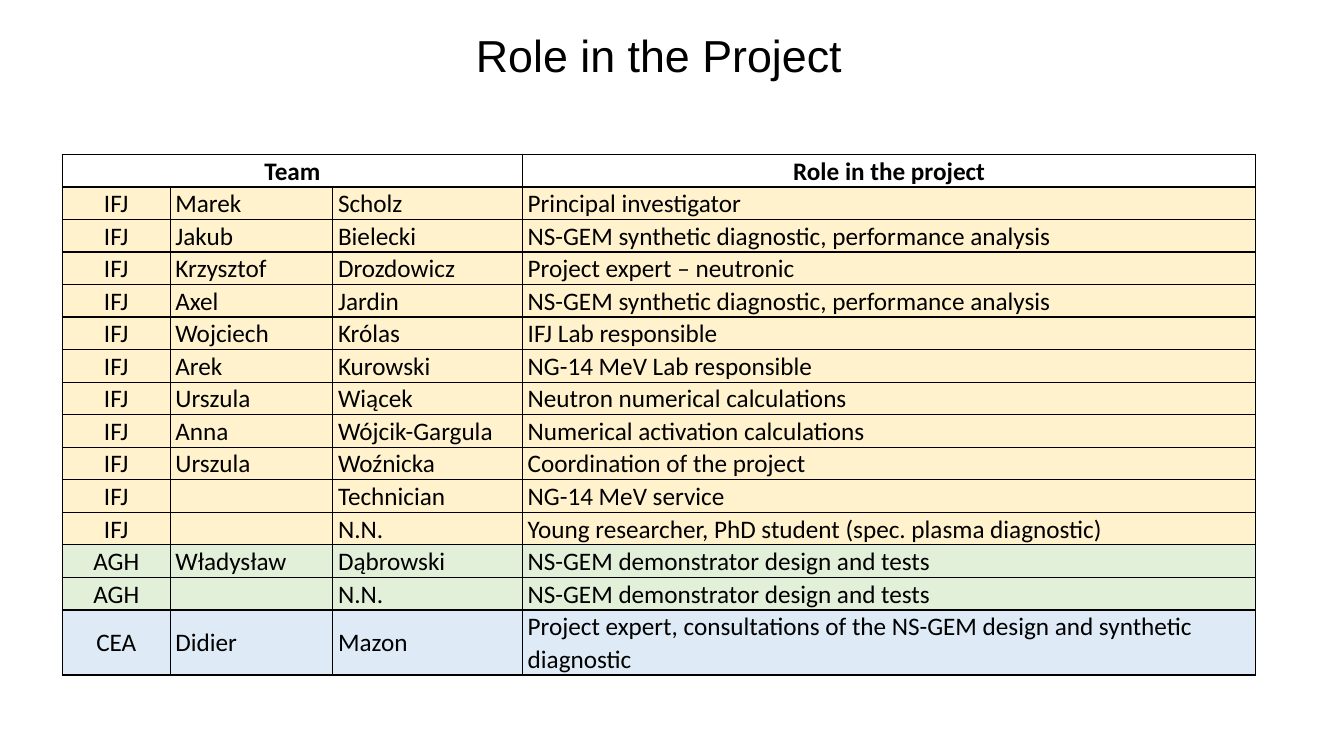
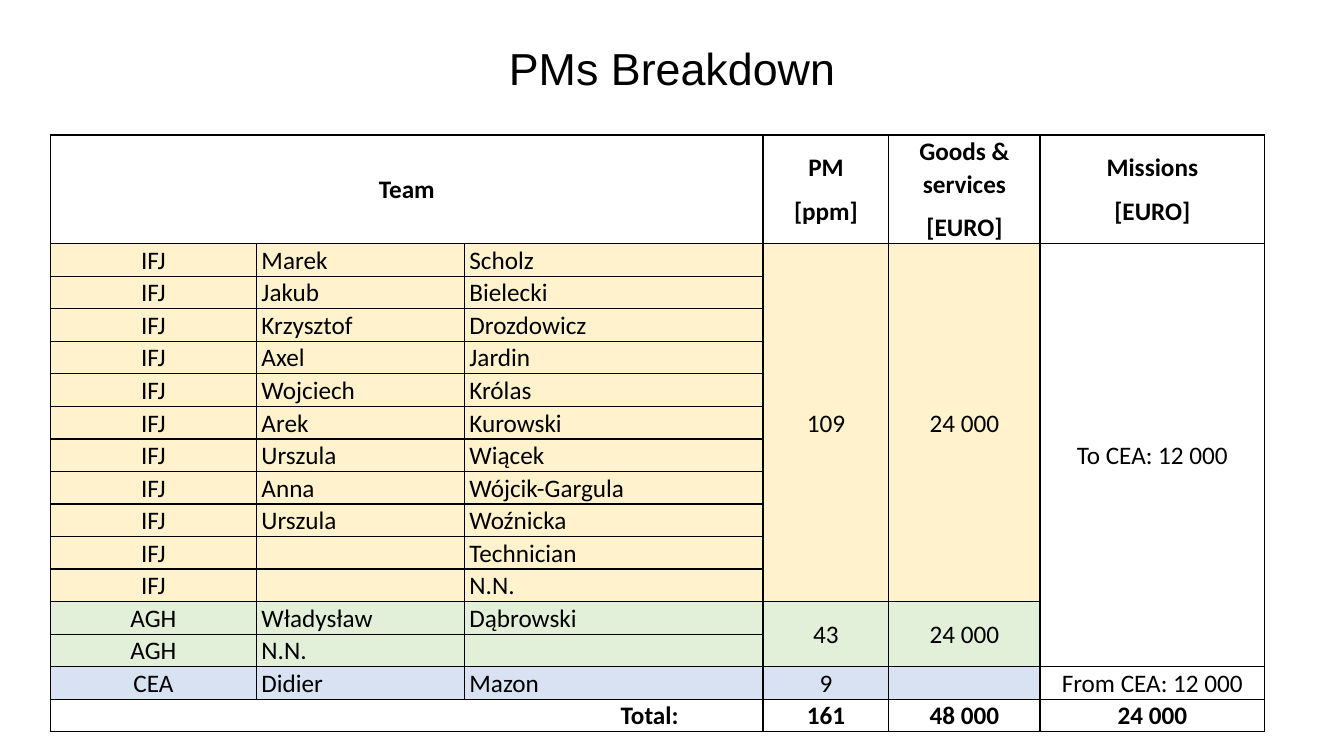
from lxml import etree
from pptx import Presentation
from pptx import util as u
from pptx.dml.color import RGBColor
from pptx.enum import text
from pptx.oxml import ns

BLACK, WHITE, SAND, GREEN = "000000", "FFFFFF", "FFF2CC", "E2EFD9"
CENTER, LEFT, RIGHT = text.PP_ALIGN.CENTER, text.PP_ALIGN.LEFT, text.PP_ALIGN.RIGHT
ROW_HEIGHT = 0.82

TEAM = [
    ("IFJ", "Marek", "Scholz", "Principal investigator"),
    ("IFJ", "Jakub", "Bielecki", "NS-GEM synthetic diagnostic, performance analysis"),
    ("IFJ", "Krzysztof", "Drozdowicz", "Project expert – neutronic"),
    ("IFJ", "Axel", "Jardin", "NS-GEM synthetic diagnostic, performance analysis"),
    ("IFJ", "Wojciech", "Królas", "IFJ Lab responsible"),
    ("IFJ", "Arek", "Kurowski", "NG-14 MeV Lab responsible"),
    ("IFJ", "Urszula", "Wiącek", "Neutron numerical calculations"),
    ("IFJ", "Anna", "Wójcik-Gargula", "Numerical activation calculations"),
    ("IFJ", "Urszula", "Woźnicka", "Coordination of the project"),
    ("IFJ", "", "Technician", "NG-14 MeV service"),
    ("IFJ", "", "N.N.", "Young researcher, PhD student (spec. plasma diagnostic)"),
    ("AGH", "Władysław", "Dąbrowski", "NS-GEM demonstrator design and tests"),
    ("AGH", "", "N.N.", "NS-GEM demonstrator design and tests"),
    ("CEA", "Didier", "Mazon",
     "Project expert, consultations of the NS-GEM design and synthetic diagnostic"),
]


def rgb(value):
    return RGBColor.from_string(value)


def apply(target, values):
    for name, value in values.items():
        setattr(target, name, value)


class Deck:
    TITLE_FONT = {"name": "Arial", "size": u.Pt(32), "bold": False}
    CELL_FONT = {"name": "Calibri", "size": u.Pt(18)}
    PARAGRAPH = {"line_spacing": 1.05, "space_after": u.Pt(8)}
    CELL = {"margin_left": u.Cm(0.13), "margin_right": u.Cm(0.13),
            "margin_top": 0, "margin_bottom": 0,
            "vertical_anchor": text.MSO_ANCHOR.MIDDLE}

    def __init__(self):
        self.prs = Presentation()
        apply(self.prs, {"slide_width": u.Cm(33.87), "slide_height": u.Cm(19.05)})
        self.slide = None

    def add_slide(self, title, left, top):
        """Start a title-only slide and place its title."""
        self.slide = self.prs.slides.add_slide(self.prs.slide_layouts[5])
        heading = self.slide.shapes.title
        apply(heading, {"left": u.Cm(left), "top": u.Cm(top),
                        "width": u.Cm(22.86), "height": u.Cm(1.6)})
        frame = heading.text_frame
        apply(frame, {"text": title, "vertical_anchor": text.MSO_ANCHOR.MIDDLE})
        frame.paragraphs[0].alignment = CENTER
        self.font(frame.paragraphs[0], self.TITLE_FONT)

    def font(self, paragraph, values):
        for run in paragraph.runs:
            apply(run.font, values)
            run.font.color.rgb = rgb(BLACK)

    def borders(self, cell):
        properties = cell._tc.get_or_add_tcPr()
        for side in ("a:lnL", "a:lnR", "a:lnT", "a:lnB"):
            line = etree.SubElement(properties, ns.qn(side), w=str(u.Pt(1)))
            fill = etree.SubElement(line, ns.qn("a:solidFill"))
            etree.SubElement(fill, ns.qn("a:srgbClr"), val=BLACK)

    def cell(self, cell, words, fill, align, bold):
        self.borders(cell)
        apply(cell, self.CELL)
        cell.fill.solid()
        cell.fill.fore_color.rgb = rgb(fill)
        cell.text_frame.text = words
        for paragraph in cell.text_frame.paragraphs:
            apply(paragraph, {**self.PARAGRAPH, "alignment": align})
            self.font(paragraph, {**self.CELL_FONT, "bold": bold})

    def table(self, left, top, widths, heights, grid, aligns, tints, tinted, merges):
        """Draw a grid; rows of a known institute are tinted, the others are bold."""
        table = self.slide.shapes.add_table(
            len(grid), len(widths), u.Cm(left), u.Cm(top),
            u.Cm(sum(widths)), u.Cm(sum(heights))).table
        apply(table, {"first_row": False, "horz_banding": False})
        for column, width in zip(table.columns, widths):
            column.width = u.Cm(width)
        for row, height in zip(table.rows, heights):
            row.height = u.Cm(height)
        for r, entries in enumerate(grid):
            member = entries[0] in tints
            for c, words in enumerate(entries):
                fill = tints[entries[0]] if member and c < tinted else WHITE
                self.cell(table.cell(r, c), words, fill,
                          aligns[c] if member else CENTER, not member)
        for first, last in merges:
            table.cell(*first).merge(table.cell(*last))
        return table


def roles_slide(deck):
    deck.add_slide("Role in the Project", 5.18, 0.58)
    deck.table(
        1.57, 3.89, [2.72, 4.1, 4.78, 18.48],
        [ROW_HEIGHT] * len(TEAM) + [2 * ROW_HEIGHT],
        [("Team", "", "", "Role in the project"), *TEAM],
        [CENTER, LEFT, LEFT, LEFT],
        {"IFJ": SAND, "AGH": GREEN, "CEA": "DEEAF6"}, 4,
        [((0, 0), (0, 2))])


def breakdown_slide(deck):
    deck.add_slide("PMs Breakdown", 5.51, 0.91)

    # Costs stand in the first row of each institute
    costs = {1: ("109", "24 000", "To CEA: 12 000"),
             12: ("43", "24 000", ""),
             14: ("9", "", "From CEA: 12 000")}
    members = [member[:3] for member in TEAM]
    members[12] = ("AGH", "N.N.", "")
    grid = [("Team", "", "", "PM\n[ppm]", "Goods & services\n[EURO]", "Missions\n[EURO]")]
    grid += [member + costs.get(r, ("", "", "")) for r, member in enumerate(members, 1)]
    grid.append(("Total:", "", "", "161", "48 000", "24 000"))

    total = len(grid) - 1
    merges = [((r, 0), (r, 2)) for r in (0, total)]
    merges += [((first, c), (last, c)) for first, last in ((1, 11), (12, 13)) for c in (3, 4)]
    merges.append(((1, 5), (13, 5)))
    table = deck.table(
        1.27, 3.4, [5.19, 5.24, 7.53, 3.17, 3.81, 5.66],
        [2.74] + [ROW_HEIGHT] * total, grid,
        [CENTER, LEFT, LEFT, CENTER, CENTER, CENTER],
        {"IFJ": SAND, "AGH": GREEN, "CEA": "D9E2F3"}, 5, merges)

    # The total label is set in from the right
    label = table.cell(total, 0)
    label.margin_right = u.Cm(2.13)
    label.text_frame.paragraphs[0].alignment = RIGHT


def main():
    deck = Deck()
    roles_slide(deck)
    breakdown_slide(deck)
    deck.prs.save("out.pptx")


if __name__ == "__main__":
    main()
